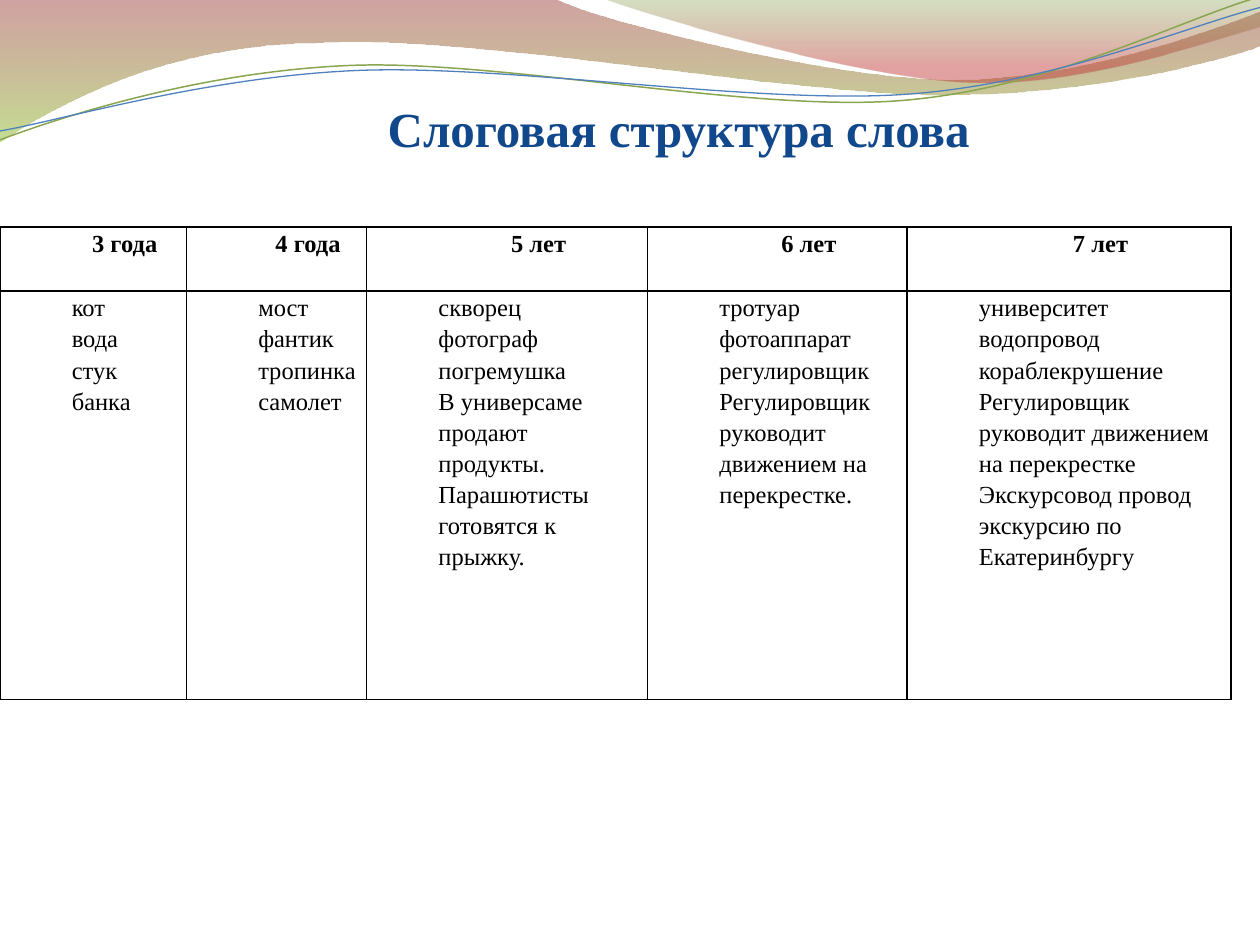
from math import cos, radians, sin

from lxml import etree
from pptx import Presentation
from pptx.dml.color import RGBColor
from pptx.enum.text import MSO_ANCHOR, PP_ALIGN
from pptx.oxml.ns import qn
from pptx.util import Inches, Pt

LEFT, MID = PP_ALIGN.LEFT, PP_ALIGN.CENTER
BOTTOM = MSO_ANCHOR.BOTTOM
BLACK = RGBColor(0, 0, 0)
NAVY = RGBColor(0x11, 0x47, 0x8B)
WINE = RGBColor(0x97, 0x33, 0x30)
LIME = RGBColor(0x95, 0xC2, 0x38)
MOSS = RGBColor(0x76, 0x95, 0x37)
RED = RGBColor(0xBE, 0x33, 0x30)
GREEN = RGBColor(0x89, 0xA5, 0x4F)
BLUE = RGBColor(0x4F, 0x81, 0xBD)
FONT = "Times New Roman"
TILT = 2.7

TITLE = "Слоговая структура слова"
AGES = [
    ("3 года", 1.48, ["кот", "вода", "стук", "банка"]),
    ("4 года", 1.43, ["мост", "фантик", "тропинка", "самолет"]),
    ("5 лет", 2.23, ["скворец", "фотограф", "погремушка",
                     "В универсаме продают продукты.",
                     "Парашютисты готовятся к прыжку."]),
    ("6 лет", 2.06, ["тротуар", "фотоаппарат", "регулировщик",
                     "Регулировщик руководит движением на перекрестке."]),
    ("7 лет", 2.57, ["университет", "водопровод", "кораблекрушение",
                     "Регулировщик руководит движением на перекрестке",
                     "Экскурсовод провод экскурсию по Екатеринбургу"]),
]
ROWS = [0.51, 3.24]

WAVES = [
    ([(0, -0.01), (4.4, -0.01),
      (4.76, 0.17, 6.64, 0.63, 7.58, 0.63),
      (8.53, 0.63, 9.58, 0.26, 10, 0.09), (10.01, 0.36),
      (9.83, 0.44, 8.7, 0.76, 7.46, 0.75),
      (6.22, 0.75, 3.82, 0.28, 2.57, 0.34),
      (1.29, 0.35, 0.46, 0.83, -0.01, 1.13), (0, -0.01)],
     [(0, WINE, 45), (1, LIME, 55)]),
    ([(4.79, -0.01),
      (5.09, 0.11, 6.82, 0.62, 7.69, 0.65),
      (8.56, 0.69, 9.61, 0.32, 10, 0.21), (10, 0), (4.79, -0.01)],
     [(0, MOSS, 30), (0.8, RED, 45)]),
]
CURVES = [
    ([(0, 1.11), (0.48, 0.93, 1.58, 0.57, 2.77, 0.52),
      (3.95, 0.47, 5.93, 0.89, 7.13, 0.8),
      (8.33, 0.71, 9.38, 0.15, 9.98, -0.02)], (4.99, 0.58), GREEN, 0.85),
    ([(0, 1.04), (0.47, 0.96, 1.64, 0.61, 2.83, 0.56),
      (4.03, 0.51, 5.97, 0.83, 7.17, 0.75),
      (8.36, 0.67, 9.41, 0.21, 10, 0.06)], (5, 0.59), BLUE, 0.75),
]


def pairs(part):
    return list(zip(part[::2], part[1::2]))


def turn(part, hub):
    c, s = cos(radians(TILT)), sin(radians(TILT))
    flat = []
    for x, y in pairs(part):
        dx, dy = x - hub[0], y - hub[1]
        flat += [hub[0] + dx * c - dy * s, hub[1] + dx * s + dy * c]
    return flat


def draw(slide, parts, close):
    dots = [(Inches(p[-2]), Inches(p[-1])) for p in parts]
    pen = slide.shapes.build_freeform(*dots[0])
    pen.add_line_segments(dots[1:], close=close)
    shape = pen.convert_to_shape()
    shape.shadow.inherit = False
    lines = list(shape._element.spPr.iter(qn("a:lnTo")))
    for line, part in zip(lines, parts[1:]):
        if len(part) == 2:
            continue
        bend = etree.Element(qn("a:cubicBezTo"))
        for x, y in pairs(part):
            etree.SubElement(bend, qn("a:pt"),
                             x=str(Inches(x) - shape.left),
                             y=str(Inches(y) - shape.top))
        line.getparent().replace(line, bend)
    return shape


def shade(shape, stops):
    shape.line.fill.background()
    shape.fill.gradient()
    shape.fill.gradient_angle = 270
    for stop, (place, color, _) in zip(shape.fill.gradient_stops, stops):
        stop.position = place
        stop.color.rgb = color
    tints = shape._element.spPr.iter(qn("a:srgbClr"))
    for tint, (_, _, alpha) in zip(tints, stops):
        etree.SubElement(tint, qn("a:alpha")).set("val", str(alpha * 1000))


def write(frame, lines, size=14, color=BLACK, bold=False, align=LEFT,
          indent=0, space=1):
    frame.word_wrap = True
    for i, line in enumerate(lines):
        para = frame.paragraphs[0] if i == 0 else frame.add_paragraph()
        para.alignment = align
        para.line_spacing = space
        para._p.get_or_add_pPr().set("marL", str(Inches(indent)))
        run = para.add_run()
        run.text = line
        font = run.font
        font.name, font.size, font.bold = FONT, Pt(size), bold
        font.color.rgb = color


def frame_cell(cell):
    cell.fill.background()
    cell.margin_left = cell.margin_right = Inches(0.07)
    cell.margin_top = cell.margin_bottom = 0
    props = cell._tc.get_or_add_tcPr()
    for i, side in enumerate(("lnL", "lnR", "lnT", "lnB")):
        edge = etree.Element(qn("a:" + side), w=str(Pt(1)))
        fill = etree.SubElement(edge, qn("a:solidFill"))
        etree.SubElement(fill, qn("a:srgbClr"), val=str(BLACK))
        props.insert(i, edge)


def main():
    deck = Presentation()
    deck.slide_width, deck.slide_height = Inches(10), Inches(7.5)
    slide = deck.slides.add_slide(deck.slide_layouts[6])

    for parts, stops in WAVES:
        shade(draw(slide, parts, True), stops)
    for parts, hub, color, width in CURVES:
        curve = draw(slide, [turn(part, hub) for part in parts], False)
        curve.rotation = -TILT
        curve.fill.background()
        curve.line.color.rgb = color
        curve.line.width = Pt(width)

    box = slide.shapes.add_textbox(Inches(1.09), Inches(0.47),
                                   Inches(8.59), Inches(0.78))
    frame = box.text_frame
    frame.vertical_anchor = BOTTOM
    frame.margin_left = frame.margin_right = frame.margin_bottom = 0
    frame.margin_top = Inches(0.05)
    write(frame, [TITLE], size=28, color=NAVY, bold=True, align=MID)

    wide = sum(width for _, width, _ in AGES)
    table = slide.shapes.add_table(len(ROWS), len(AGES), 0, Inches(1.8),
                                   Inches(wide), Inches(sum(ROWS))).table
    table.first_row = table.horz_banding = False
    for row, high in zip(table.rows, ROWS):
        row.height = Inches(high)
    for c, (age, width, words) in enumerate(AGES):
        table.columns[c].width = Inches(width)
        for r, lines in enumerate(([age], words)):
            cell = table.cell(r, c)
            frame_cell(cell)
            write(cell.text_frame, lines, bold=r == 0,
                  align=LEFT if r else MID, indent=0.5, space=1.15)

    deck.save("out.pptx")


if __name__ == "__main__":
    main()
